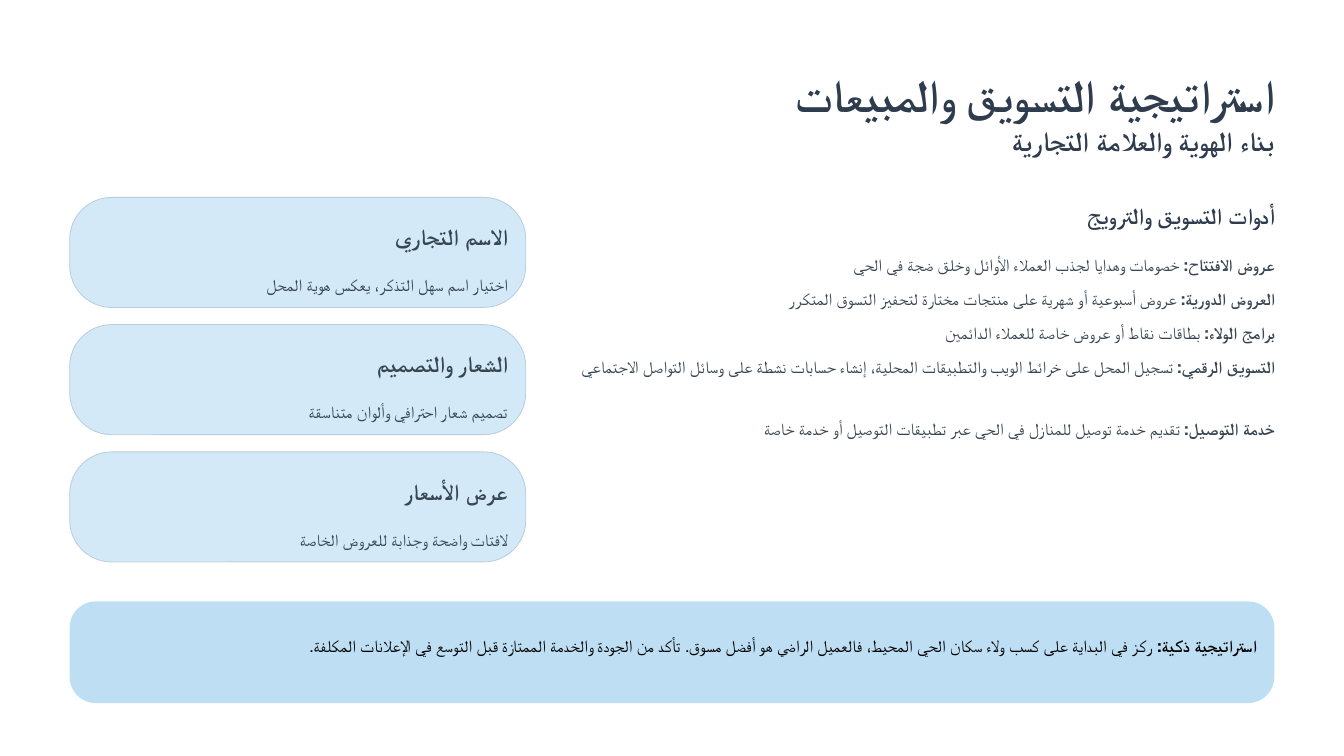
from pptx import Presentation
from pptx.dml.color import RGBColor
from pptx.enum.shapes import MSO_SHAPE
from pptx.enum.text import MSO_ANCHOR, MSO_AUTO_SIZE, PP_ALIGN
from pptx.util import Inches, Pt
from lxml import etree

ROUNDED = MSO_SHAPE.ROUNDED_RECTANGLE
TOP = MSO_ANCHOR.TOP
NO_AUTOFIT = MSO_AUTO_SIZE.NONE
RIGHT = PP_ALIGN.RIGHT

NAVY = RGBColor(0x2E, 0x3C, 0x4E)
SLATE = RGBColor(0x38, 0x46, 0x53)
BLACK = RGBColor(0x00, 0x00, 0x00)
CARD_FILL = RGBColor(0xD4, 0xE9, 0xF7)
CARD_LINE = RGBColor(0xBA, 0xCF, 0xDD)
TIP_FILL = RGBColor(0xBE, 0xDF, 0xF3)

HEADING_FONT = "Roboto"
BODY_FONT = "Montserrat"
BODY_SIZE = 14.5
BODY_SPACING = 1.62

CARDS = [
    ("الاسم التجاري", "اختيار اسم سهل التذكر، يعكس هوية المحل"),
    ("الشعار والتصميم", "تصميم شعار احترافي وألوان متناسقة"),
    ("عرض الأسعار", "لافتات واضحة وجذابة للعروض الخاصة"),
]
TOOLS = [
    ("عروض الافتتاح:", " خصومات وهدايا لجذب العملاء الأوائل وخلق ضجة في الحي"),
    ("العروض الدورية:", " عروض أسبوعية أو شهرية على منتجات مختارة لتحفيز التسوق المتكرر"),
    ("برامج الولاء:", " بطاقات نقاط أو عروض خاصة للعملاء الدائمين"),
    ("التسويق الرقمي:", " تسجيل المحل على خرائط الويب والتطبيقات المحلية، "
                        "إنشاء حسابات نشطة على وسائل التواصل الاجتماعي"),
    ("خدمة التوصيل:", " تقديم خدمة توصيل للمنازل في الحي عبر تطبيقات التوصيل أو خدمة خاصة"),
]
TIP = ("استراتيجية ذكية:", " ركز في البداية على كسب ولاء سكان الحي المحيط، فالعميل الراضي هو أفضل مسوق. "
                           "تأكد من الجودة والخدمة الممتازة قبل التوسع في الإعلانات المكلفة.")


def place(shape, left, top, width, height):
    """Position a text shape and clear its margins and autofit."""
    shape.left, shape.top = Inches(left), Inches(top)
    shape.width, shape.height = Inches(width), Inches(height)
    frame = shape.text_frame
    frame.margin_left = frame.margin_top = frame.margin_right = frame.margin_bottom = 0
    frame.word_wrap = True
    frame.auto_size = NO_AUTOFIT
    frame.vertical_anchor = TOP
    return frame


def format_paragraph(paragraph, font_name, size, color, spacing):
    properties = paragraph._p.get_or_add_pPr()
    properties.set("rtl", "1")
    paragraph.alignment = RIGHT
    paragraph.line_spacing = spacing
    paragraph.space_before = Pt(0)
    font = paragraph.font
    font.name, font.size = font_name, Pt(size)
    font.color.rgb = color


def write_heading(shape, box, text, size, color=NAVY, spacing=1.26):
    paragraph = place(shape, *box).paragraphs[0]
    paragraph.text = text
    format_paragraph(paragraph, HEADING_FONT, size, color, spacing)
    paragraph.font.bold = True


def write_body(paragraph, term, text, color=SLATE, spacing=BODY_SPACING):
    """Write a bold term, if any, followed by regular text."""
    if term:
        paragraph.add_run().text = term
        paragraph.runs[0].font.bold = True
    paragraph.add_run().text = text
    format_paragraph(paragraph, BODY_FONT, BODY_SIZE, color, spacing)


def add_text_box(slide):
    return slide.shapes.add_textbox(0, 0, 0, 0)


def add_panel(slide, left, top, width, height, rounding, fill, line=None):
    panel = slide.shapes.add_shape(
        ROUNDED, Inches(left), Inches(top), Inches(width), Inches(height))
    panel.adjustments[0] = rounding
    panel.shadow.inherit = False
    panel.fill.solid()
    panel.fill.fore_color.rgb = fill
    if line is None:
        panel.line.fill.background()
    else:
        panel.line.color.rgb = line
        panel.line.width = Pt(0.75)


def add_card(slide, top, name, description):
    add_panel(slide, 0.83, top, 5.43, 1.31, 0.38, CARD_FILL, CARD_LINE)
    write_heading(add_text_box(slide), (3.32, top + 0.22, 2.73, 0.34), name, 19.5, SLATE)
    frame = place(add_text_box(slide), 1.04, top + 0.77, 5, 0.33)
    write_body(frame.paragraphs[0], None, description)


def fill_tools(body):
    frame = place(body, 6.78, 2.87, 8.4, 2.28)
    for index, (term, text) in enumerate(TOOLS):
        paragraph = frame.add_paragraph() if index else frame.paragraphs[0]
        properties = paragraph._p.get_or_add_pPr()
        properties.set("marL", "0")
        properties.set("indent", "0")
        etree.SubElement(properties, properties.tag.replace("pPr", "buNone"))
        write_body(paragraph, term, text, spacing=Pt(29.1))
    frame.paragraphs[-1].space_before = Pt(24)


def main():
    presentation = Presentation()
    presentation.slide_width, presentation.slide_height = Inches(16), Inches(9)
    slide = presentation.slides.add_slide(presentation.slide_layouts[1])
    title, body = slide.placeholders

    write_heading(title, (8.67, 0.63, 6.5, 0.68), "استراتيجية التسويق والمبيعات", 39)
    write_heading(add_text_box(slide), (11.83, 1.39, 3.34, 0.41),
                  "بناء الهوية والعلامة التجارية", 23.5, spacing=1.23)
    for index, (name, description) in enumerate(CARDS):
        add_card(slide, 2.35 + index * 1.515, name, description)

    write_heading(add_text_box(slide), (12.45, 2.32, 2.73, 0.34), "أدوات التسويق والترويج", 19.5)
    fill_tools(body)

    add_panel(slide, 0.83, 7.16, 14.34, 1.21, 0.256, TIP_FILL)
    frame = place(add_text_box(slide), 1.5, 7.42, 13.46, 0.66)
    write_body(frame.paragraphs[0], *TIP, color=BLACK)

    presentation.save("out.pptx")


if __name__ == "__main__":
    main()
